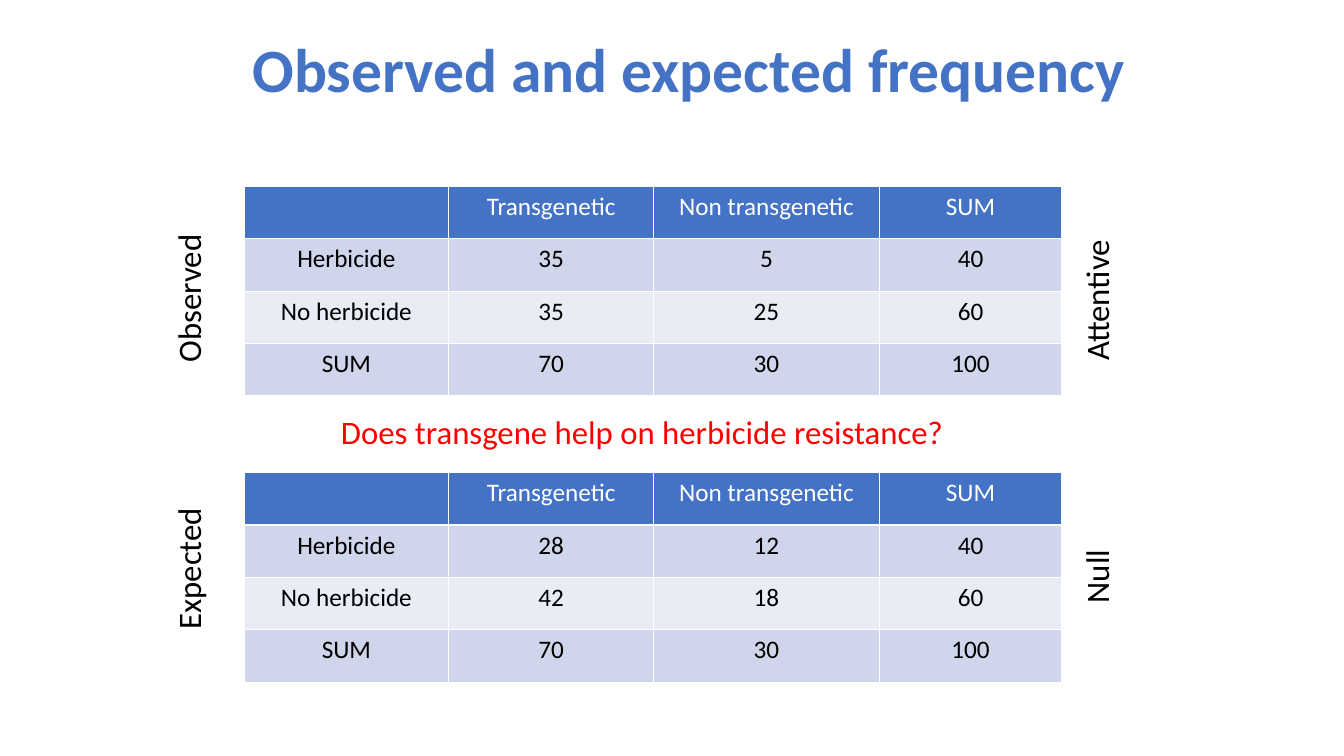
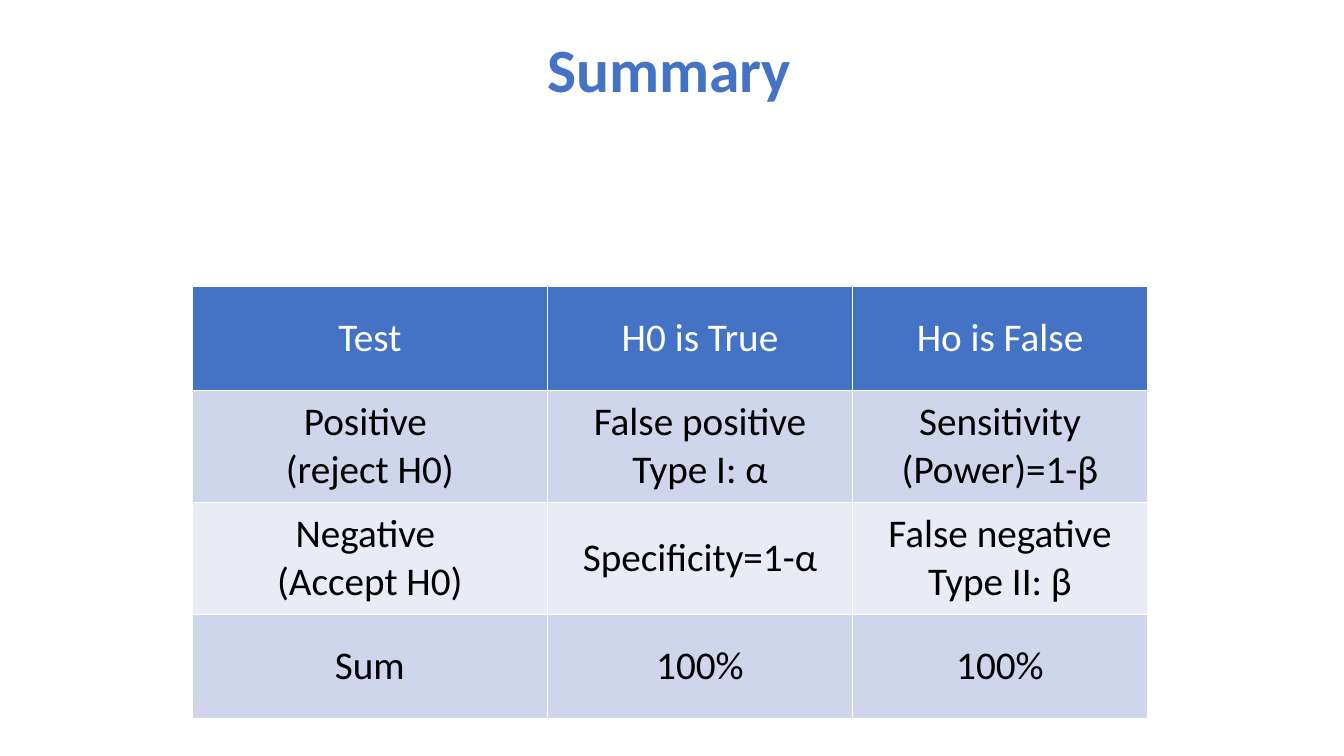
import dataclasses

import lxml.etree
import pptx
import pptx.dml.color
import pptx.enum.text
import pptx.oxml.ns
import pptx.util

Cm = pptx.util.Cm
Pt = pptx.util.Pt
MIDDLE = pptx.enum.text.MSO_ANCHOR.MIDDLE
TOP = pptx.enum.text.MSO_ANCHOR.TOP


@dataclasses.dataclass(frozen=True)
class Theme:
    font: str = "Calibri"
    accent: str = "4472C4"
    bands: tuple = ("CFD5EA", "E9EBF5")
    grid: str = "FFFFFF"
    header_text: str = "FFFFFF"
    text: str = "000000"
    question: str = "FF0000"
    title_size: float = 44
    label_size: float = 23.4
    count_size: float = 18
    summary_size: float = 28
    grid_width: float = 1


THEME = Theme()

COUNT_HEADER = ["", "Transgenetic", "Non transgenetic", "SUM"]
OBSERVED = [
    COUNT_HEADER,
    ["Herbicide", "35", "5", "40"],
    ["No herbicide", "35", "25", "60"],
    ["SUM", "70", "30", "100"],
]
EXPECTED = [
    COUNT_HEADER,
    ["Herbicide", "28", "12", "40"],
    ["No herbicide", "42", "18", "60"],
    ["SUM", "70", "30", "100"],
]
SUMMARY = [
    ["Test", "H0 is True", "Ho is False"],
    ["Positive \n(reject H0)", "False positive\nType I: α", "Sensitivity (Power)=1-β"],
    ["Negative \n(Accept H0)", "Specificity=1-α", "False negative\nType II: β"],
    ["Sum", "100%", "100%"],
]


def rgb(color):
    return pptx.dml.color.RGBColor.from_string(color)


def write(frame, text, size, color, bold=False, spacing=1.0):
    """Fill a text frame with centred text, one paragraph per line."""
    frame.text = text
    for para in frame.paragraphs:
        para.alignment = pptx.enum.text.PP_ALIGN.CENTER
        para.line_spacing = spacing
        for span in para.runs:
            span.font.name = THEME.font
            span.font.size = Pt(size)
            span.font.bold = bold
            span.font.color.rgb = rgb(color)


def add_page(deck, title, left):
    page = deck.slides.add_slide(deck.slide_layouts[5])
    box = page.shapes.title
    box.left, box.top, box.width, box.height = left, Cm(0), Cm(29.21), Cm(3.68)
    box.text_frame.vertical_anchor = MIDDLE
    write(box.text_frame, title, THEME.title_size, THEME.accent, bold=True, spacing=0.9)
    return page


def add_label(page, text, center_x, center_y, width, color=THEME.text, rotation=0):
    height = Cm(1.83)
    box = page.shapes.add_textbox(
        center_x - width // 2, center_y - height // 2, width, height
    )
    box.rotation = rotation
    box.text_frame.word_wrap = True
    box.text_frame.vertical_anchor = MIDDLE
    write(box.text_frame, text, THEME.label_size, color)


def add_side_label(page, text, center_x, center_y):
    add_label(page, text, center_x, center_y, Cm(5.66), rotation=270)


def outline_cell(cell):
    properties = cell._tc.get_or_add_tcPr()
    qn = pptx.oxml.ns.qn
    for position, side in enumerate(("a:lnL", "a:lnR", "a:lnT", "a:lnB")):
        line = lxml.etree.Element(qn(side), w=str(Pt(THEME.grid_width)))
        fill = lxml.etree.SubElement(line, qn("a:solidFill"))
        lxml.etree.SubElement(fill, qn("a:srgbClr"), val=THEME.grid)
        properties.insert(position, line)


def add_banded_table(page, rows, left, top, widths, heights, size, anchor):
    table = page.shapes.add_table(
        len(rows), len(widths), left, top, sum(widths), sum(heights)
    ).table
    for column, width in zip(table.columns, widths):
        column.width = width
    for index, (row, texts, height) in enumerate(zip(table.rows, rows, heights)):
        row.height = height
        is_header = index == 0
        fill = THEME.accent if is_header else THEME.bands[(index - 1) % 2]
        color = THEME.header_text if is_header else THEME.text
        for cell, text in zip(row.cells, texts):
            cell.fill.solid()
            cell.fill.fore_color.rgb = rgb(fill)
            cell.vertical_anchor = anchor
            write(cell.text_frame, text, size, color)
            outline_cell(cell)


def add_count_table(page, rows, top):
    widths = [Cm(5.16), Cm(5.16), Cm(5.69), Cm(4.6)]
    heights = [Cm(1.32)] * len(rows)
    add_banded_table(
        page, rows, Cm(6.15), top, widths, heights, THEME.count_size, TOP
    )


def build_frequency_page(deck):
    page = add_page(deck, "Observed and expected frequency", Cm(2.77))
    add_count_table(page, OBSERVED, Cm(4.7))
    add_count_table(page, EXPECTED, Cm(11.91))
    add_label(
        page, "Does transgene help on herbicide resistance?",
        Cm(16.18), Cm(10.87), Cm(22.05), THEME.question,
    )
    left, right = Cm(4.74), Cm(27.62)
    add_side_label(page, "Observed", left, Cm(7.52))
    add_side_label(page, "Expected", left, Cm(14.33))
    add_side_label(page, "Attentive", right, Cm(7.57))
    add_side_label(page, "Null", right, Cm(14.53))


def build_summary_page(deck):
    page = add_page(deck, "Summary", Cm(2.26))
    widths = [Cm(8.94), Cm(7.7), Cm(7.42)]
    heights = [Cm(2.62), Cm(2.82), Cm(2.82), Cm(2.62)]
    add_banded_table(
        page, SUMMARY, Cm(4.85), Cm(7.22), widths, heights,
        THEME.summary_size, MIDDLE,
    )


def main():
    deck = pptx.Presentation()
    deck.slide_width, deck.slide_height = Cm(33.87), Cm(19.05)
    build_frequency_page(deck)
    build_summary_page(deck)
    deck.save("out.pptx")


if __name__ == "__main__":
    main()
